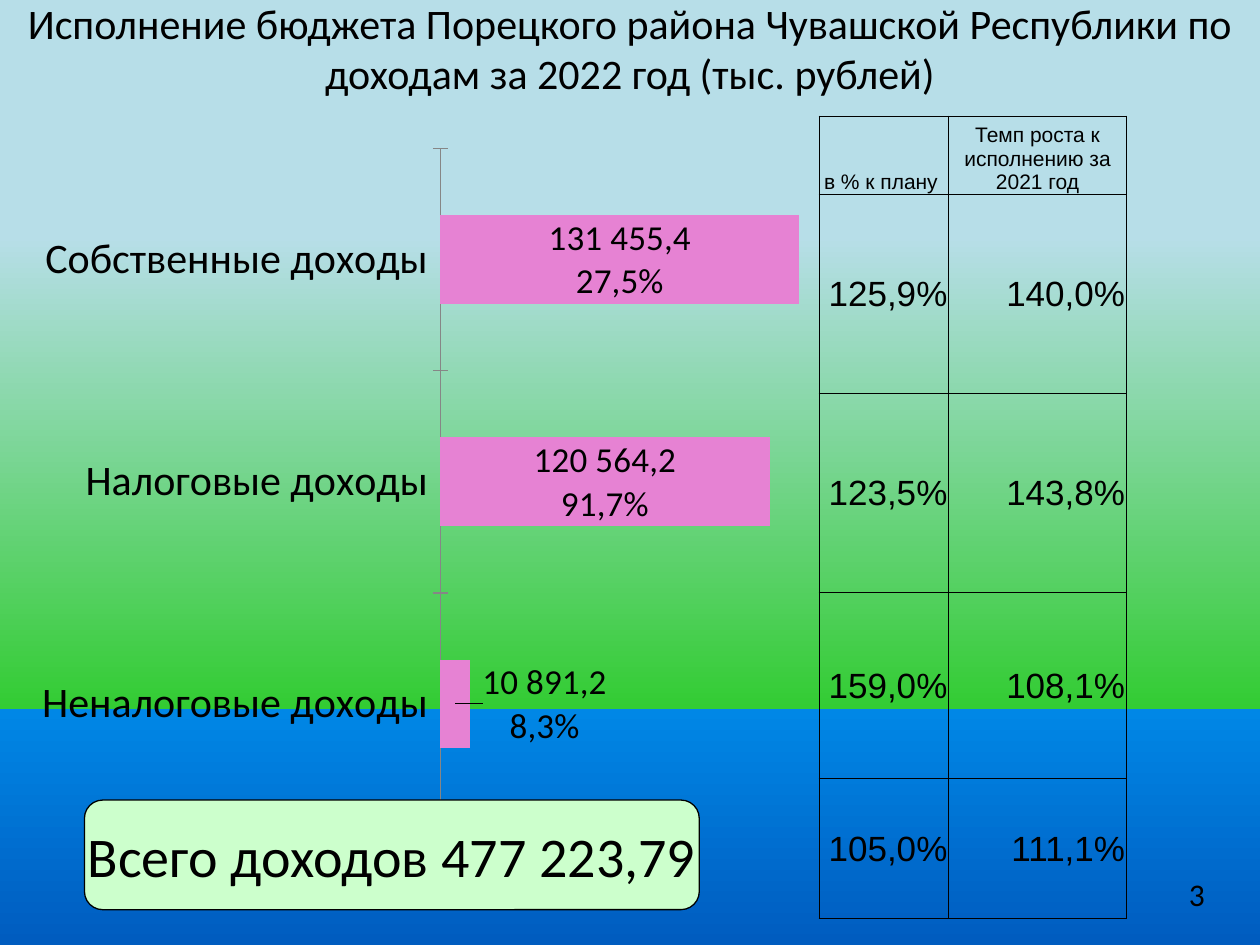
from lxml import etree
from pptx import Presentation
from pptx import util as u
from pptx.chart import data
from pptx.dml.color import RGBColor
from pptx.enum import chart as charts, shapes, text
from pptx.oxml import parse_xml
from pptx.oxml.ns import nsdecls, qn

BLACK = RGBColor(0x00, 0x00, 0x00)
GREY = RGBColor(0x86, 0x86, 0x86)
PINK = RGBColor(0xE6, 0x82, 0xD3)
MINT = RGBColor(0xCC, 0xFF, 0xCC)
SKY = RGBColor(0xB7, 0xDE, 0xE8)
GRASS = RGBColor(0x33, 0xCC, 0x33)
WATER = RGBColor(0x00, 0x87, 0xE6)
DEEP = RGBColor(0x00, 0x5C, 0xBF)

COLUMNS, ROWS = 100, 75
CENTER, RIGHT = text.PP_ALIGN.CENTER, text.PP_ALIGN.RIGHT
MIDDLE, BOTTOM = text.MSO_ANCHOR.MIDDLE, text.MSO_ANCHOR.BOTTOM

INCOME = [
    ("Неналоговые доходы", 10891.2, "10 891,2\n8,3%"),
    ("Налоговые доходы", 120564.2, "120 564,2\n91,7%"),
    ("Собственные доходы", 131455.4, "131 455,4\n27,5%"),
]
RATES = [
    ("в % к плану ", "Темп роста к исполнению за 2021 год"),
    ("125,9%", "140,0%"),
    ("123,5%", "143,8%"),
    ("159,0%", "108,1%"),
    ("105,0%", "111,1%"),
]


class BudgetSlide:
    def __init__(self, deck):
        self.column = deck.slide_width / COLUMNS
        self.row = deck.slide_height / ROWS
        self.page = deck.slides.add_slide(deck.slide_layouts[5])

    def place(self, left, top, width, height):
        return (u.Emu(round(left * self.column)), u.Emu(round(top * self.row)),
                u.Emu(round(width * self.column)), u.Emu(round(height * self.row)))

    def style(self, font, size, name="Calibri"):
        font.name, font.size, font.bold = name, u.Pt(size), False
        font.color.rgb = BLACK

    def set_words(self, frame, words, size, align=CENTER, name="Calibri"):
        frame.text = words
        for para in frame.paragraphs:
            para.alignment = align
            self.style(para.font, size, name)

    def background(self, stops):
        fill = self.page.background.fill
        fill.gradient()
        fill.gradient_angle = 270
        stop_list = next(self.page.background._cSld.iter(qn("a:gsLst")))
        for stop in list(stop_list):
            stop_list.remove(stop)
        for share, color in stops:
            stop = etree.SubElement(stop_list, qn("a:gs"), pos=str(share * 1000))
            etree.SubElement(stop, qn("a:srgbClr"), val=str(color))

    def title(self, words, area):
        box = self.page.shapes.title
        box.left, box.top, box.width, box.height = self.place(*area)
        frame = box.text_frame
        frame.auto_size = text.MSO_AUTO_SIZE.NONE
        frame.vertical_anchor = MIDDLE
        self.set_words(frame, words, 24)

    def plate(self, words, size, area, color=None):
        box = self.page.shapes.add_shape(
            shapes.MSO_SHAPE.ROUNDED_RECTANGLE, *self.place(*area))
        box.shadow.inherit = False
        if color is None:
            box.fill.background()
            box.line.fill.background()
        else:
            box.fill.solid()
            box.fill.fore_color.rgb = color
            box.line.color.rgb = BLACK
            box.line.width = u.Pt(0.75)
        frame = box.text_frame
        frame.word_wrap = color is None
        frame.vertical_anchor = MIDDLE
        self.set_words(frame, words, size)

    def bars(self, records, area):
        source = data.CategoryChartData(number_format="0.0")
        source.categories = [name for name, _, _ in records]
        source.add_series("Series 1", [value for _, value, _ in records])
        chart = self.page.shapes.add_chart(
            charts.XL_CHART_TYPE.BAR_CLUSTERED, *self.place(*area), source).chart
        chart.has_legend = chart.has_title = False
        self.style(chart.font, 18)
        axis = chart.category_axis
        axis.major_tick_mark = charts.XL_TICK_MARK.CROSS
        axis.format.line.color.rgb = GREY
        self.style(axis.tick_labels.font, 24)
        values = chart.value_axis
        values.visible = values.has_major_gridlines = False
        values.minimum_scale, values.maximum_scale = 0, 140000
        plot = chart.plots[0]
        plot.gap_width, plot.vary_by_categories = 150, False
        series = plot.series[0]
        series.format.fill.solid()
        series.format.fill.fore_color.rgb = PINK
        labels = series.data_labels
        labels.show_value = True
        labels.number_format, labels.number_format_is_linked = "0.0", False
        labels.position = charts.XL_LABEL_POSITION.CENTER
        self.style(labels.font, 20)
        for index, (_, _, words) in enumerate(records):
            label = series.points[index].data_label
            self.set_words(label.text_frame, words, 20)
            label.position = charts.XL_LABEL_POSITION.CENTER
        first = next(series._element.iter(qn("c:dLbl")))
        self.set_layout(first.find(qn("c:idx")), x=0.11, y=0)
        area_xml = chart._chartSpace.chart.plotArea
        self.set_layout(area_xml, inner=True, x=0.51, y=0.02, w=0.47, h=0.96)

    def set_layout(self, anchor, inner=False, **shares):
        modes = '<c:layoutTarget val="inner"/>' if inner else ""
        if inner:
            modes += '<c:xMode val="edge"/><c:yMode val="edge"/>'
        sizes = "".join(f'<c:{key} val="{share}"/>' for key, share in shares.items())
        layout = parse_xml(f'<c:layout {nsdecls("c")}><c:manualLayout>'
                           f'{modes}{sizes}</c:manualLayout></c:layout>')
        owner = anchor if inner else anchor.getparent()
        for old in owner.findall(qn("c:layout")):
            owner.remove(old)
        if inner:
            owner.insert(0, layout)
        else:
            anchor.addnext(layout)

    def table(self, records, left, top, widths, heights):
        area = self.place(left, top, sum(widths), sum(heights))
        grid = self.page.shapes.add_table(len(heights), len(widths), *area).table
        grid.first_row = grid.horz_banding = False
        for column, width in zip(grid.columns, widths):
            column.width = round(width * self.column)
        for row, height in zip(grid.rows, heights):
            row.height = round(height * self.row)
        for index, record in enumerate(records):
            size, align, anchor = (20, RIGHT, MIDDLE) if index else (12, CENTER, BOTTOM)
            for cell, words in zip(grid.rows[index].cells, record):
                cell.margin_left = cell.margin_right = cell.margin_top = u.Inches(0.01)
                cell.margin_bottom = 0
                cell.vertical_anchor = anchor
                cell.fill.background()
                self.set_words(cell.text_frame, words, size, align, "Arial")
                self.border(cell)

    def border(self, cell):
        properties = cell._tc.get_or_add_tcPr()
        for index, side in enumerate(("lnL", "lnR", "lnT", "lnB")):
            properties.insert(index, parse_xml(
                f'<a:{side} {nsdecls("a")} w="{u.Pt(0.5)}"><a:solidFill>'
                f'<a:srgbClr val="{BLACK}"/></a:solidFill></a:{side}>'))


def main():
    deck = Presentation()
    deck.slide_width, deck.slide_height = u.Inches(10), u.Inches(7.5)
    slide = BudgetSlide(deck)
    slide.background([(25, SKY), (75, GRASS), (75, WATER), (100, DEEP)])
    slide.title("Исполнение бюджета Порецкого района Чувашской Республики "
                "по доходам за 2022 год (тыс. рублей)", (0, 0, 100, 7.6))
    slide.plate("3", 18, (90, 69, 10, 3.9))
    slide.bars(INCOME, (2, 10.7, 64.6, 55.1))
    slide.plate("Всего доходов 477 223,79", 32, (6.7, 63.5, 48.8, 8.7), MINT)
    slide.table(RATES, 65, 9.2, (10.3, 14.1), (6.2, 15.8, 15.8, 14.8, 11.1))
    deck.save("out.pptx")


if __name__ == "__main__":
    main()
